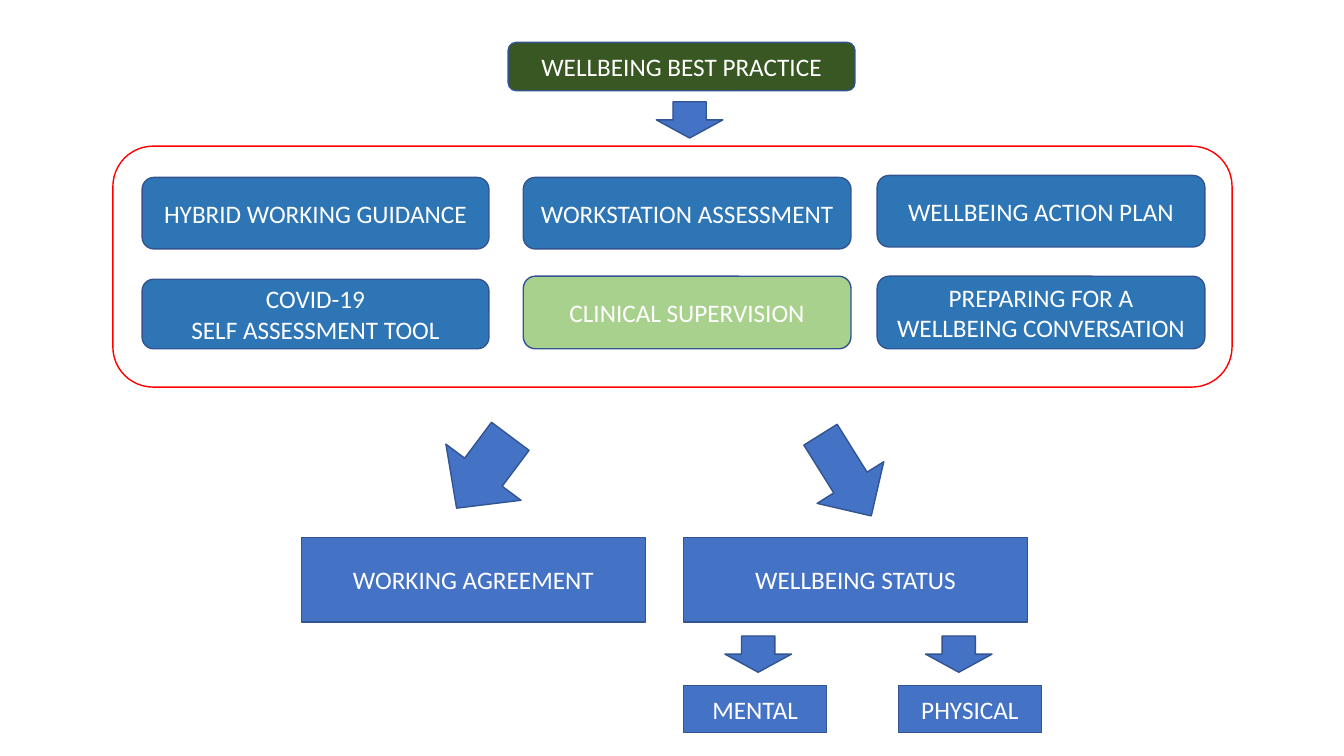
from pptx import Presentation
from pptx.dml.color import RGBColor
from pptx.enum.shapes import MSO_SHAPE
from pptx.enum.text import MSO_ANCHOR, PP_ALIGN
from pptx.util import Inches, Pt

ROUNDED = MSO_SHAPE.FLOWCHART_ALTERNATE_PROCESS
RECT = MSO_SHAPE.RECTANGLE
ARROW = MSO_SHAPE.DOWN_ARROW
MIDDLE = MSO_ANCHOR.MIDDLE
CENTER = PP_ALIGN.CENTER

BLUE, TOOL_BLUE = "4472C4", "2E75B6"
GREEN, DARK_GREEN = "A9D18E", "385723"
EDGE, RED, WHITE = "325491", "FF0000", "FFFFFF"


def color(hex_code):
    return RGBColor.from_string(hex_code)


def add_box(kind, x, y, w, h, fill=BLUE, text="", line=EDGE):
    sp = slide.shapes.add_shape(kind, Inches(x), Inches(y), Inches(w), Inches(h))
    sp.shadow.inherit = False
    if fill:
        sp.fill.solid()
        sp.fill.fore_color.rgb = color(fill)
    else:
        sp.fill.background()
    sp.line.color.rgb = color(line)
    sp.line.width = Pt(1)
    if text:
        tf = sp.text_frame
        tf.word_wrap = True
        tf.vertical_anchor = MIDDLE
        for i, words in enumerate(text.split("\n")):
            p = tf.add_paragraph() if i else tf.paragraphs[0]
            p.alignment = CENTER
            r = p.add_run()
            r.text = words
            r.font.name = "Calibri"
            r.font.size = Pt(18)
            r.font.color.rgb = color(WHITE)
    return sp


prs = Presentation()
prs.slide_width, prs.slide_height = Inches(13.33), Inches(7.5)
slide = prs.slides.add_slide(prs.slide_layouts[6])

# Tools: three columns of two, each with its own left, width and row tops
tools = [
    (1.41, 3.44, [(1.76, 0.71, TOOL_BLUE, "HYBRID WORKING GUIDANCE"),
                  (2.77, 0.69, TOOL_BLUE, "COVID-19\nSELF ASSESSMENT TOOL")]),
    (5.19, 3.25, [(1.76, 0.71, TOOL_BLUE, "WORKSTATION ASSESSMENT"),
                  (2.74, 0.72, GREEN, "CLINICAL SUPERVISION")]),
    (8.7, 3.25, [(1.74, 0.71, TOOL_BLUE, "WELLBEING ACTION PLAN"),
                 (2.74, 0.72, TOOL_BLUE, "PREPARING FOR A WELLBEING CONVERSATION")]),
]
for x, w, rows in tools:
    for y, h, fill, text in rows:
        add_box(ROUNDED, x, y, w, h, fill, text)

# Red frame around the tools
add_box(ROUNDED, 1.12, 1.45, 11.1, 2.39, fill=None, line=RED)

# Title
add_box(ROUNDED, 5.04, 0.42, 3.44, 0.48, DARK_GREEN, "WELLBEING BEST PRACTICE")

# Outcomes and the two kinds of status
for x, text in [(2.99, "WORKING AGREEMENT"), (6.78, "WELLBEING STATUS")]:
    add_box(RECT, x, 5.33, 3.41, 0.84, text=text)
for x, text in [(6.78, "MENTAL"), (8.91, "PHYSICAL")]:
    add_box(RECT, x, 6.8, 1.42, 0.47, text=text)

# Small arrows pointing down
for x, y in [(6.51, 1.01), (7.19, 6.31), (9.18, 6.31)]:
    add_box(ARROW, x, y, 0.66, 0.36)

# Large tilted arrows from the frame to the outcomes
for x, w, h, angle in [(4.33, 0.93, 0.89, 36.8), (8, 0.78, 0.95, 328)]:
    add_box(ARROW, x, 4.24, w, h).rotation = angle

prs.save("out.pptx")
